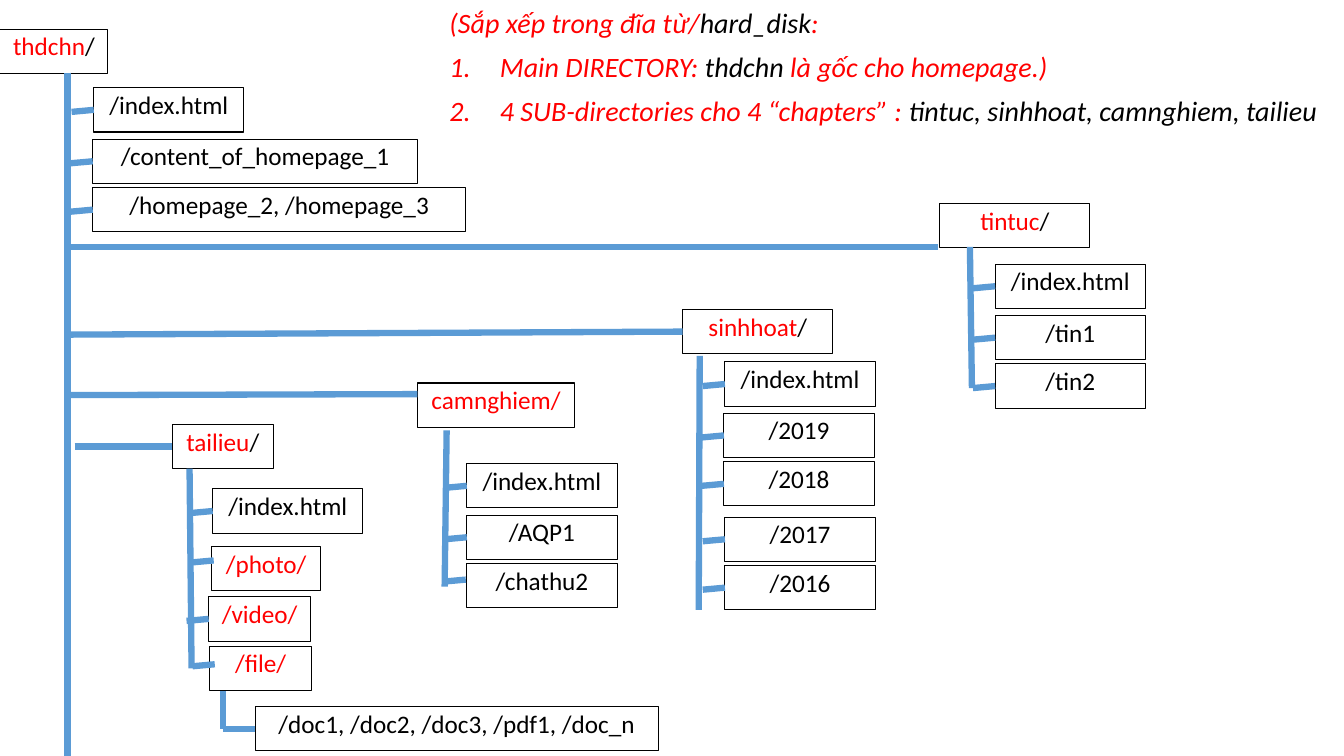
import pptx
import pptx.dml.color
import pptx.enum.shapes
import pptx.enum.text
import pptx.oxml.ns
import pptx.util
from dataclasses import dataclass
from lxml import etree

RED = pptx.dml.color.RGBColor(0xFF, 0x00, 0x00)
BLACK = pptx.dml.color.RGBColor(0x00, 0x00, 0x00)
BLUE = pptx.dml.color.RGBColor(0x5B, 0x9B, 0xD5)
FONT = "Calibri"
SCALE = 9144
HIGH = 44
STUB = 22
RISE = 2


@dataclass(frozen=True)
class Box:
    left: int
    top: int
    width: int = 149
    red: str = ""
    black: str = ""
    stub: bool = False


@dataclass(frozen=True)
class Line:
    x1: int
    y1: int
    x2: int
    y2: int
    goal: str = ""


@dataclass(frozen=True)
class Note:
    runs: tuple[tuple[str, pptx.dml.color.RGBColor], ...]
    number: bool = True


BOXES = [
    Box(0, 29, 107, "thdchn", "/"),
    Box(93, 87, black="/index.html", stub=True),
    Box(92, 138, 322, black="/content_of_homepage_1", stub=True),
    Box(92, 186, 370, black="/homepage_2, /homepage_3", stub=True),
    Box(932, 202, red="tintuc", black="/"),
    Box(987, 262, black="/index.html", stub=True),
    Box(987, 313, black="/tin1", stub=True),
    Box(987, 361, black="/tin2", stub=True),
    Box(677, 307, red="sinhhoat", black="/"),
    Box(719, 359, black="/index.html", stub=True),
    Box(718, 410, black="/2019", stub=True),
    Box(718, 458, black="/2018", stub=True),
    Box(719, 513, black="/2017", stub=True),
    Box(719, 561, black="/2016", stub=True),
    Box(414, 380, 156, "camnghiem/"),
    Box(463, 460, black="/index.html", stub=True),
    Box(463, 511, black="/AQP1", stub=True),
    Box(463, 559, black="/chathu2"),
    Box(171, 421, 100, "tailieu", "/"),
    Box(211, 485, black="/index.html", stub=True),
    Box(210, 542, 108, "/photo/"),
    Box(207, 592, 101, "/video/", stub=True),
    Box(208, 641, 101, "/file/"),
    Box(253, 701, 400, black="/doc1, /doc2, /doc3, /pdf1, /doc_n"),
]

LINES = [
    Line(67, 72, 67, 750),
    Line(67, 245, 930, 245),
    Line(67, 332, 677, 330, "sinhhoat/"),
    Line(67, 392, 414, 391),
    Line(74, 443, 171, 443, "tailieu/"),
    Line(962, 245, 964, 385),
    Line(694, 353, 693, 605),
    Line(443, 427, 441, 582),
    Line(188, 465, 190, 663),
    Line(221, 686, 221, 723),
    Line(221, 723, 253, 723, "/doc1, /doc2, /doc3, /pdf1, /doc_n"),
    Line(440, 577, 462, 575),
    Line(190, 558, 212, 556),
    Line(191, 661, 213, 659),
]

NOTES = [
    Note((("(Sắp xếp trong đĩa từ/", RED), ("hard_disk", BLACK), (":", RED)), False),
    Note((("Main DIRECTORY: ", RED), ("thdchn ", BLACK), ("là gốc cho homepage.)", RED))),
    Note((
        ("4 SUB-directories cho 4 “chapters” : ", RED),
        ("tintuc, sinhhoat, camnghiem, tailieu", BLACK),
    )),
]


def px(size: int) -> pptx.util.Emu:
    return pptx.util.Emu(size * SCALE)


def add_run(para, text: str, color: pptx.dml.color.RGBColor, size: int, slant: bool = False) -> None:
    run = para.add_run()
    run.text = text
    run.font.name = FONT
    run.font.size = pptx.util.Pt(size)
    run.font.color.rgb = color
    run.font.italic = slant


def space(para) -> None:
    para.line_spacing = 0.9
    para.space_before = pptx.util.Pt(10)


def draw_box(shapes, box: Box):
    kind = pptx.enum.shapes.MSO_SHAPE.RECTANGLE
    shape = shapes.add_shape(kind, px(box.left), px(box.top), px(box.width), px(HIGH))
    shape.shadow.inherit = False
    shape.fill.background()
    shape.line.color.rgb = BLACK
    shape.line.width = pptx.util.Pt(0.75)
    frame = shape.text_frame
    frame.word_wrap = True
    frame.vertical_anchor = pptx.enum.text.MSO_ANCHOR.TOP
    para = frame.paragraphs[0]
    para.alignment = pptx.enum.text.PP_ALIGN.CENTER
    space(para)
    for text, color in ((box.red, RED), (box.black, BLACK)):
        if text:
            add_run(para, text, color, 18)
    return shape


def draw_line(shapes, line: Line, goal=None) -> None:
    kind = pptx.enum.shapes.MSO_CONNECTOR.STRAIGHT
    link = shapes.add_connector(kind, px(line.x1), px(line.y1), px(line.x2), px(line.y2))
    if goal is not None:
        link.end_connect(goal, 1)
    link.line.color.rgb = BLUE
    link.line.width = pptx.util.Pt(4.5)
    etree.SubElement(link._element.spPr, pptx.oxml.ns.qn("a:effectLst"))


def draw_notes(shapes) -> None:
    frame = shapes.add_textbox(px(436), px(4), px(896), px(287)).text_frame
    frame.word_wrap = True
    for index, note in enumerate(NOTES):
        para = frame.add_paragraph() if index else frame.paragraphs[0]
        space(para)
        if note.number:
            props = para._p.get_or_add_pPr()
            props.set("marL", str(px(50)))
            props.set("indent", str(px(-50)))
            etree.SubElement(props, pptx.oxml.ns.qn("a:buFont"), typeface="+mj-lt")
            etree.SubElement(props, pptx.oxml.ns.qn("a:buAutoNum"), type="arabicPeriod")
        for text, color in note.runs:
            add_run(para, text, color, 20, True)


def main() -> None:
    deck = pptx.Presentation()
    deck.slide_width, deck.slide_height = px(1333), px(750)
    shapes = deck.slides.add_slide(deck.slide_layouts[6]).shapes
    goals = {}
    for box in BOXES:
        shape = draw_box(shapes, box)
        goals[box.red + box.black] = shape
        if box.stub:
            mid = box.top + HIGH // 2
            draw_line(shapes, Line(box.left - STUB, mid + RISE, box.left, mid), shape)
    for line in LINES:
        draw_line(shapes, line, goals.get(line.goal))
    draw_notes(shapes)
    deck.save("out.pptx")


if __name__ == "__main__":
    main()
